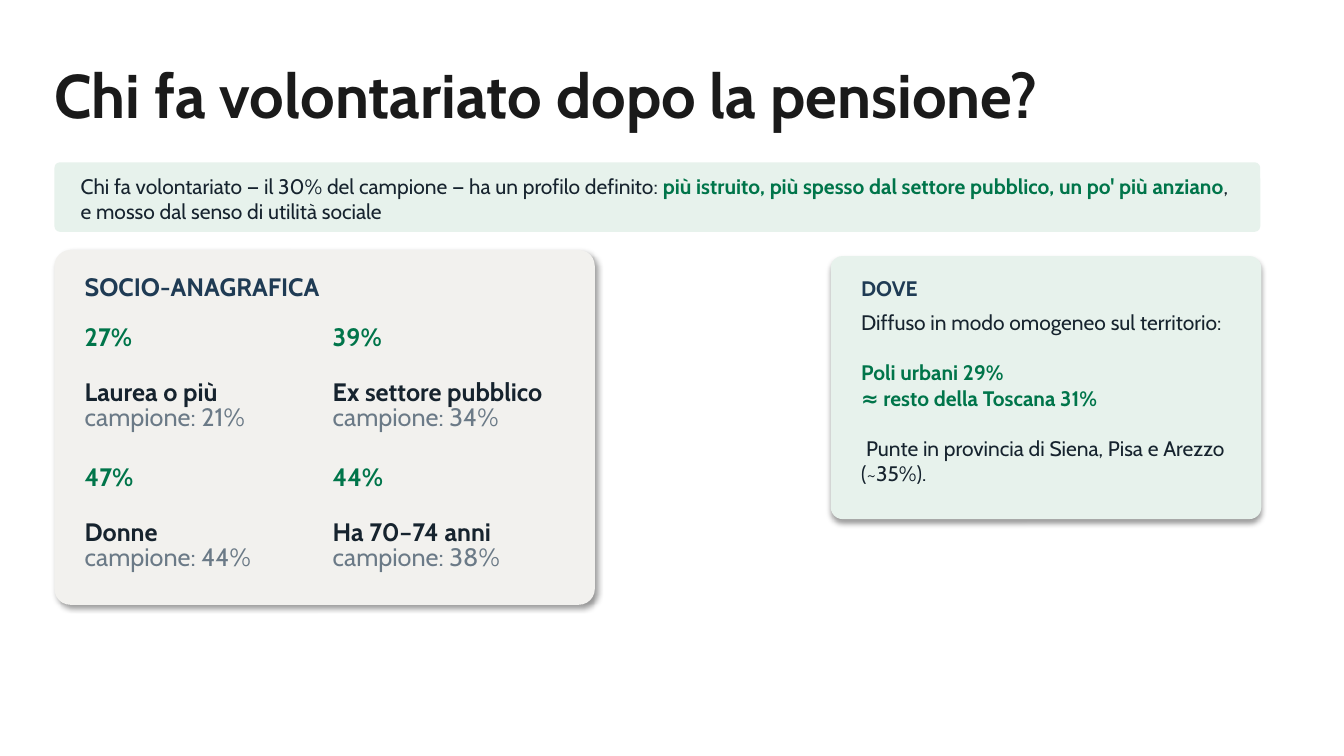
from dataclasses import dataclass

from lxml import etree
from pptx import Presentation
from pptx.dml.color import RGBColor
from pptx.enum.shapes import MSO_SHAPE
from pptx.enum.text import MSO_ANCHOR, MSO_AUTO_SIZE, PP_ALIGN
from pptx.oxml.ns import qn
from pptx.util import Emu, Pt

ROUNDED = MSO_SHAPE.ROUNDED_RECTANGLE
TOP = MSO_ANCHOR.TOP
LEFT = PP_ALIGN.LEFT
GROW = MSO_AUTO_SIZE.SHAPE_TO_FIT_TEXT

FONT = "Cabin"
BLACK = RGBColor(0x1A, 0x1A, 0x1A)
INK = RGBColor(0x16, 0x23, 0x2E)
NAVY = RGBColor(0x1F, 0x3B, 0x54)
GREEN = RGBColor(0x00, 0x75, 0x4A)
GREY = RGBColor(0x6B, 0x7A, 0x87)
MINT = RGBColor(0xE7, 0xF2, 0xEC)
SAND = RGBColor(0xF2, 0xF1, 0xEE)

PX = 9144


@dataclass
class Panel:
    left: int
    top: int
    width: int
    height: int
    fill: RGBColor
    rounding: float
    shadow_angle: int | None = None


@dataclass
class Statistic:
    share: str
    label: str
    sample: str


PANELS = [
    Panel(54, 161, 1196, 69, MINT, 0.08),
    Panel(54, 248, 536, 352, SAND, 0.045, 45),
    Panel(824, 254, 427, 261, MINT, 0.045, 90),
]
STATISTICS = [
    Statistic("27%", "Laurea o più", "campione: 21%"),
    Statistic("39%", "Ex settore pubblico", "campione: 34%"),
    Statistic("47%", "Donne", "campione: 44%"),
    Statistic("44%", "Ha 70–74 anni", "campione: 38%"),
]
COLUMNS = 2
GRID_LEFT, GRID_TOP = 84, 319
COLUMN_STEP, ROW_STEP = 246, 139


def px(value: int) -> Emu:
    return Emu(value * PX)


def place(shape, left: int, top: int, width: int, height: int) -> None:
    shape.left, shape.top = px(left), px(top)
    shape.width, shape.height = px(width), px(height)


def prepare_frame(frame) -> None:
    frame.margin_left = frame.margin_top = 0
    frame.margin_right = frame.margin_bottom = 0
    frame.vertical_anchor = TOP
    frame.word_wrap = True
    frame.auto_size = GROW


def add_span(para, text: str, *, size: int, color: RGBColor, bold: bool = False) -> None:
    span = para.add_run()
    span.text = text
    span.font.name = FONT
    span.font.size = Pt(size)
    span.font.bold = bold
    span.font.color.rgb = color


def add_box(page, left: int, top: int, width: int, height: int):
    box = page.shapes.add_textbox(px(left), px(top), px(width), px(height))
    prepare_frame(box.text_frame)
    return box.text_frame


def add_label(page, left: int, top: int, width: int, height: int, text: str, **style) -> None:
    add_span(add_box(page, left, top, width, height).paragraphs[0], text, **style)


def add_shadow(shape, angle: int) -> None:
    effects = shape._element.spPr.find(qn("a:effectLst"))
    shadow = etree.SubElement(
        effects, qn("a:outerShdw"), blurRad=str(Pt(4)), dist=str(Pt(3)),
        dir=str(angle * 60000), algn="bl", rotWithShape="0")
    color = etree.SubElement(shadow, qn("a:srgbClr"), val="000000")
    etree.SubElement(color, qn("a:alpha"), val="40000")


def add_panel(page, panel: Panel) -> None:
    shape = page.shapes.add_shape(
        ROUNDED, px(panel.left), px(panel.top), px(panel.width), px(panel.height))
    shape.adjustments[0] = panel.rounding
    shape.fill.solid()
    shape.fill.fore_color.rgb = panel.fill
    shape.line.fill.background()
    shape.shadow.inherit = False
    if panel.shadow_angle is not None:
        add_shadow(shape, panel.shadow_angle)


def add_statistic(page, left: int, top: int, statistic: Statistic) -> None:
    add_label(page, left, top, 238, 30, statistic.share, size=18, color=GREEN, bold=True)
    add_label(page, left, top + 54, 238, 30, statistic.label, size=18, color=INK, bold=True)
    add_label(page, left, top + 79, 238, 30, statistic.sample, size=18, color=GREY)


def add_title(page, text: str) -> None:
    title = page.shapes.title
    place(title, 54, 56, 1243, 74)
    prepare_frame(title.text_frame)
    para = title.text_frame.paragraphs[0]
    para.alignment = LEFT
    add_span(para, text, size=44, color=BLACK, bold=True)


def add_summary(page) -> None:
    para = add_box(page, 80, 172, 1147, 50).paragraphs[0]
    add_span(para, "Chi fa volontariato — il 30% del campione — ha un profilo definito: ",
             size=15, color=INK)
    add_span(para, "più istruito, più spesso dal settore pubblico, un po' più anziano",
             size=15, color=GREEN, bold=True)
    add_span(para, ", e mosso dal senso di utilità sociale", size=15, color=INK)


def add_places(page) -> None:
    frame = add_box(page, 854, 307, 385, 177)
    intro = frame.paragraphs[0]
    add_span(intro, "Diffuso in modo omogeneo sul territorio:", size=15, color=INK)
    cities = frame.add_paragraph()
    cities.space_before = Pt(18)
    add_span(cities, "Poli urbani 29%", size=15, color=GREEN, bold=True)
    region = frame.add_paragraph()
    add_span(region, "≈ resto della Toscana 31%", size=15, color=GREEN, bold=True)
    peaks = frame.add_paragraph()
    peaks.space_before = Pt(18)
    peaks._p.get_or_add_pPr().set("indent", str(px(5)))
    add_span(peaks, "Punte in provincia di Siena, Pisa e Arezzo (~35%).", size=15, color=INK)


def main() -> None:
    deck = Presentation()
    deck.slide_width, deck.slide_height = px(1333), px(750)
    page = deck.slides.add_slide(deck.slide_layouts[5])
    add_title(page, "Chi fa volontariato dopo la pensione?")
    for panel in PANELS:
        add_panel(page, panel)
    add_summary(page)
    add_label(page, 84, 269, 476, 30, "SOCIO-ANAGRAFICA", size=18, color=NAVY, bold=True)
    for index, statistic in enumerate(STATISTICS):
        row, column = divmod(index, COLUMNS)
        add_statistic(page, GRID_LEFT + column * COLUMN_STEP,
                      GRID_TOP + row * ROW_STEP, statistic)
    add_label(page, 854, 273, 385, 25, "DOVE", size=15, color=NAVY, bold=True)
    add_places(page)
    deck.save("out.pptx")


if __name__ == "__main__":
    main()
